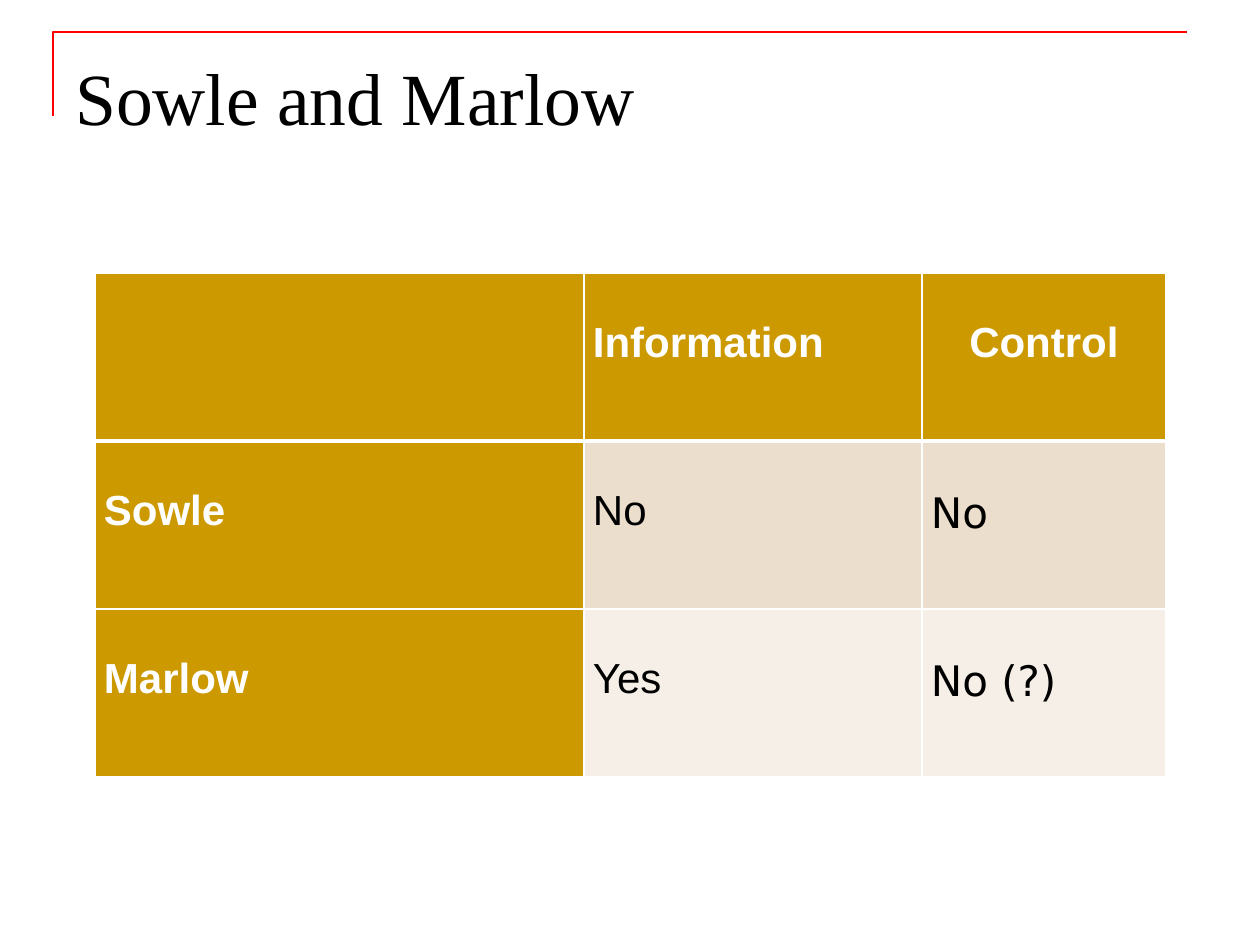
from lxml.etree import SubElement
from pptx import Presentation
from pptx.dml.color import RGBColor
from pptx.enum.text import MSO_ANCHOR as Anchor, PP_ALIGN as Align
from pptx.oxml.ns import qn
from pptx.util import Emu, Pt

EMU_PER_PX = 914400 / 126
COLORS = {
    "background": "FFFFFF",
    "corner": "FF0000",
    "title": "000000",
    "header": "CC9900",
    "header_text": "FFFFFF",
    "body_text": "000000",
    "border": "FFFFFF",
    "band_dark": "ECDECC",
    "band_light": "F6EFE7",
}
TITLE = "Sowle and Marlow"
ANSWERS = [
    ["", "Information", "Control"],
    ["Sowle", "No", "No"],
    ["Marlow", "Yes", "No (?)"],
]
COLUMN_WIDTHS = [489, 338, 244]
ROW_HEIGHT = 168


def px(length):
    """Turn pixels into EMU."""
    return Emu(round(length * EMU_PER_PX))


def color(name):
    """Look up a named colour."""
    return RGBColor.from_string(COLORS[name])


def style_text(paragraph, font_name, size, color_name, bold=False):
    """Format every run of a paragraph."""
    for run in paragraph.runs:
        run.font.name = font_name
        run.font.size = Pt(size)
        run.font.bold = bold
        run.font.color.rgb = color(color_name)


def add_corner(slide):
    """Draw the red corner rule around the title."""
    builder = slide.shapes.build_freeform(53, 116, scale=EMU_PER_PX)
    builder.add_line_segments([(53, 32), (1187, 32)], close=False)
    corner = builder.convert_to_shape()
    corner.shadow.inherit = False
    corner.fill.background()
    corner.line.color.rgb = color("corner")
    corner.line.width = Pt(1.5)


def add_title(slide):
    """Write the slide title."""
    title = slide.shapes.add_textbox(px(63), px(38), px(1134), px(157))
    frame = title.text_frame
    frame.word_wrap = True
    frame.vertical_anchor = Anchor.TOP
    frame.margin_top = px(14)
    frame.text = TITLE
    style_text(frame.paragraphs[0], "Times New Roman", 42, "title")


def set_borders(cell, bottom_width):
    """Give a cell white borders with its own bottom width."""
    properties = cell._tc.get_or_add_tcPr()
    widths = {"a:lnL": 1, "a:lnR": 1, "a:lnT": 1, "a:lnB": bottom_width}
    for side, width in widths.items():
        border = SubElement(properties, qn(side), w=str(Pt(width)))
        fill = SubElement(border, qn("a:solidFill"))
        SubElement(fill, qn("a:srgbClr"), val=COLORS["border"])


def fill_cell(cell, text, row, column):
    """Write and format a cell according to its place in the table."""
    is_header = row == 0 or column == 0
    band = "band_dark" if row % 2 else "band_light"
    set_borders(cell, 3 if row == 0 else 1)
    cell.fill.solid()
    cell.fill.fore_color.rgb = color("header" if is_header else band)
    cell.margin_left = cell.margin_right = px(9)
    cell.margin_top = cell.margin_bottom = 0
    cell.vertical_anchor = Anchor.TOP
    cell.text_frame.text = text
    paragraph = cell.text_frame.paragraphs[0]
    paragraph.line_spacing = 2.0
    if row == 0 and column == 2:
        paragraph.alignment = Align.CENTER
    font_name = "DejaVu Sans" if row and column == 2 else "Arial"
    text_color = "header_text" if is_header else "body_text"
    style_text(paragraph, font_name, 24, text_color, is_header)


def add_answers(slide):
    """Build the comparison table."""
    row_count, column_count = len(ANSWERS), len(COLUMN_WIDTHS)
    table = slide.shapes.add_table(
        row_count, column_count, px(95), px(273),
        px(sum(COLUMN_WIDTHS)), px(ROW_HEIGHT * row_count),
    ).table
    for table_column, width in zip(table.columns, COLUMN_WIDTHS):
        table_column.width = px(width)
    for row, texts in enumerate(ANSWERS):
        table.rows[row].height = px(ROW_HEIGHT)
        for column, text in enumerate(texts):
            fill_cell(table.cell(row, column), text, row, column)


def main():
    """Build and save the slide."""
    deck = Presentation()
    deck.slide_width, deck.slide_height = px(1260), px(945)
    slide = deck.slides.add_slide(deck.slide_layouts[6])
    slide.background.fill.solid()
    slide.background.fill.fore_color.rgb = color("background")
    add_corner(slide)
    add_title(slide)
    add_answers(slide)
    deck.save("out.pptx")


if __name__ == "__main__":
    main()
